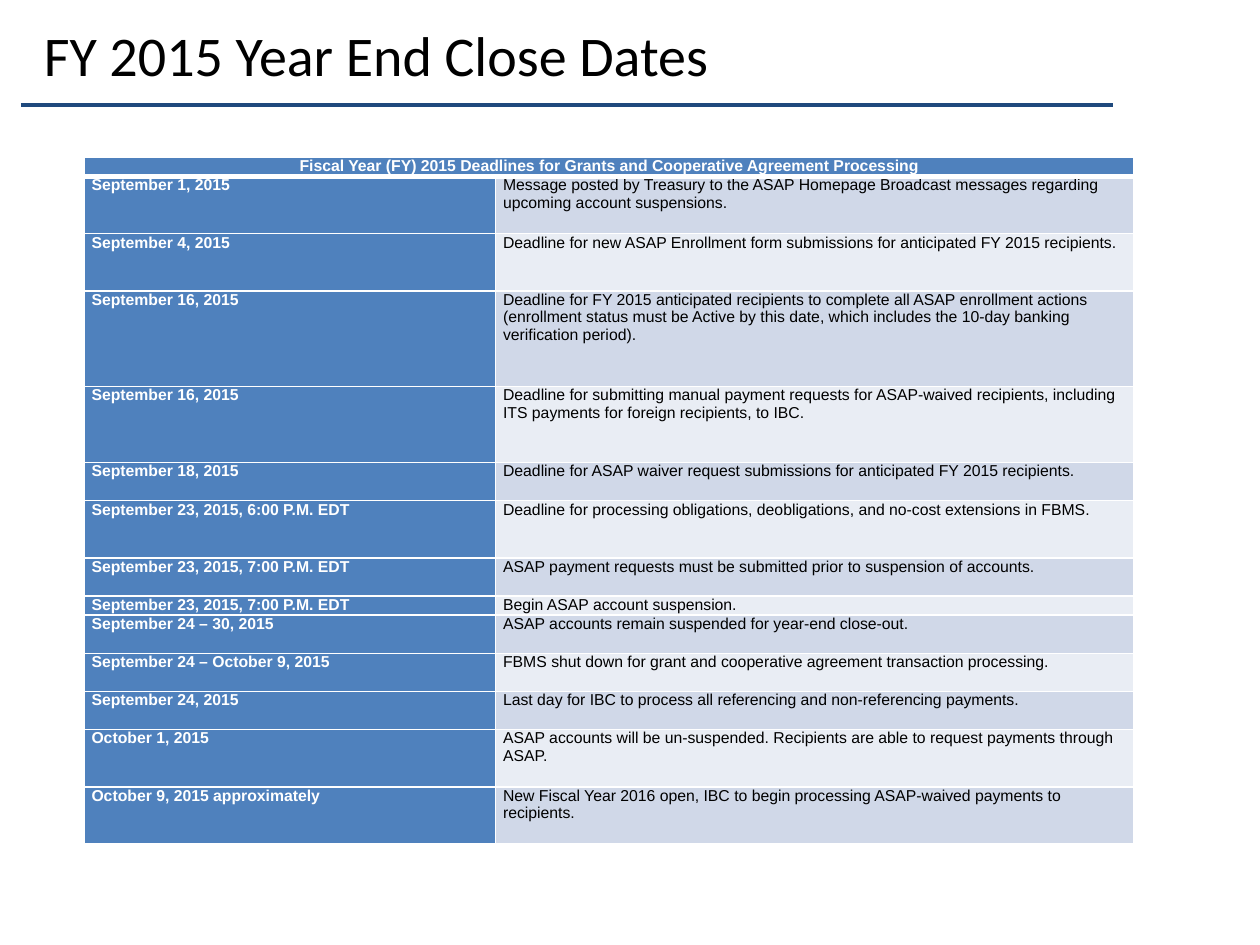
"""Build the slide of fiscal year 2015 close dates as a ruled title over a deadline table."""
import lxml.etree
import pptx
import pptx.dml.color
import pptx.enum.shapes
import pptx.enum.text
import pptx.oxml.ns
import pptx.util

NAVY = pptx.dml.color.RGBColor(0x1F, 0x49, 0x7D)
BLUE = pptx.dml.color.RGBColor(0x4F, 0x81, 0xBD)
BAND_DARK = pptx.dml.color.RGBColor(0xD0, 0xD8, 0xE8)
BAND_LIGHT = pptx.dml.color.RGBColor(0xE9, 0xED, 0xF4)
WHITE = pptx.dml.color.RGBColor(0xFF, 0xFF, 0xFF)
BLACK = pptx.dml.color.RGBColor(0x00, 0x00, 0x00)

HEADING = "Fiscal Year (FY) 2015 Deadlines for Grants and Cooperative Agreement Processing"
DEADLINES = [
    (3, "September 1, 2015",
     "Message posted by Treasury to the ASAP Homepage Broadcast messages regarding upcoming account suspensions."),
    (3, "September 4, 2015",
     "Deadline for new ASAP Enrollment form submissions for anticipated FY 2015 recipients."),
    (5, "September 16, 2015",
     "Deadline for FY 2015 anticipated recipients to complete all ASAP enrollment actions (enrollment status "
     "must be Active by this date, which includes the 10-day banking verification period)."),
    (4, "September 16, 2015",
     "Deadline for submitting manual payment requests for ASAP-waived recipients, including ITS payments "
     "for foreign recipients, to IBC."),
    (2, "September 18, 2015",
     "Deadline for ASAP waiver request submissions for anticipated FY 2015 recipients."),
    (3, "September 23, 2015, 6:00 P.M. EDT",
     "Deadline for processing obligations, deobligations, and no-cost extensions in FBMS."),
    (2, "September 23, 2015, 7:00 P.M. EDT",
     "ASAP payment requests must be submitted prior to suspension of accounts."),
    (1, "September 23, 2015, 7:00 P.M. EDT", "Begin ASAP account suspension."),
    (2, "September 24 – 30, 2015", "ASAP accounts remain suspended for year-end close-out."),
    (2, "September 24 – October 9, 2015",
     "FBMS shut down for grant and cooperative agreement transaction processing."),
    (2, "September 24, 2015", "Last day for IBC to process all referencing and non-referencing payments."),
    (3, "October 1, 2015",
     "ASAP accounts will be un-suspended. Recipients are able to request payments through ASAP."),
    (3, "October 9, 2015 approximately",
     "New Fiscal Year 2016 open, IBC to begin processing ASAP-waived payments to recipients."),
]


def write_text(text_frame, text, *, font="Arial", size=9, color=BLACK, bold=False,
               align=pptx.enum.text.PP_ALIGN.LEFT):
    paragraph = text_frame.paragraphs[0]
    paragraph.alignment = align
    run = paragraph.add_run()
    run.text = text
    run.font.name = font
    run.font.size = pptx.util.Pt(size)
    run.font.bold = bold
    run.font.color.rgb = color


def format_cell(cell, fill, bottom_width):
    cell.margin_left = cell.margin_right = pptx.util.Inches(0.06)
    cell.margin_top = cell.margin_bottom = 0
    properties = cell._tc.get_or_add_tcPr()
    for side, width in (("lnL", 1), ("lnR", 1), ("lnT", 1), ("lnB", bottom_width)):
        border = lxml.etree.SubElement(properties, pptx.oxml.ns.qn(f"a:{side}"), w=str(pptx.util.Pt(width)))
        solid = lxml.etree.SubElement(border, pptx.oxml.ns.qn("a:solidFill"))
        lxml.etree.SubElement(solid, pptx.oxml.ns.qn("a:srgbClr"), val=str(WHITE))
    cell.fill.solid()
    cell.fill.fore_color.rgb = fill


presentation = pptx.Presentation()
presentation.slide_width = pptx.util.Inches(10)
presentation.slide_height = pptx.util.Inches(7.5)
slide = presentation.slides.add_slide(presentation.slide_layouts[6])
unit = presentation.slide_width // 120

rule = slide.shapes.add_connector(
    pptx.enum.shapes.MSO_CONNECTOR.STRAIGHT, 2 * unit, 10 * unit, 106 * unit, 10 * unit)
rule.line.color.rgb = NAVY
rule.line.width = pptx.util.Pt(2.5)
lxml.etree.SubElement(rule._element.spPr, pptx.oxml.ns.qn("a:effectLst"))

title = slide.shapes.add_textbox(3 * unit, 2 * unit, 108 * unit, int(6.4 * unit))
title.text_frame.word_wrap = True
title.text_frame.vertical_anchor = pptx.enum.text.MSO_ANCHOR.MIDDLE
write_text(title.text_frame, "FY 2015 Year End Close Dates", font="Calibri", size=32)

row_lines = [1] + [lines for lines, date, event in DEADLINES]
table_height = pptx.util.Inches(5.45)
line_height = table_height // sum(row_lines)
table = slide.shapes.add_table(
    len(row_lines), 2, 8 * unit, 15 * unit, 100 * unit, table_height).table
table.first_col = True
for column, share in zip(table.columns, (39.2, 60.8)):
    column.width = int(share * unit)
for row, lines in zip(table.rows, row_lines):
    row.height = lines * line_height

for heading_cell in table.rows[0].cells:
    format_cell(heading_cell, BLUE, 3)
table.cell(0, 0).merge(table.cell(0, 1))
write_text(table.cell(0, 0).text_frame, HEADING, color=WHITE, bold=True,
           align=pptx.enum.text.PP_ALIGN.CENTER)

for index, (lines, date, event) in enumerate(DEADLINES, start=1):
    date_cell, event_cell = table.rows[index].cells
    format_cell(date_cell, BLUE, 1)
    format_cell(event_cell, BAND_DARK if index % 2 else BAND_LIGHT, 1)
    write_text(date_cell.text_frame, date, color=WHITE, bold=True)
    write_text(event_cell.text_frame, event)

presentation.save("out.pptx")
